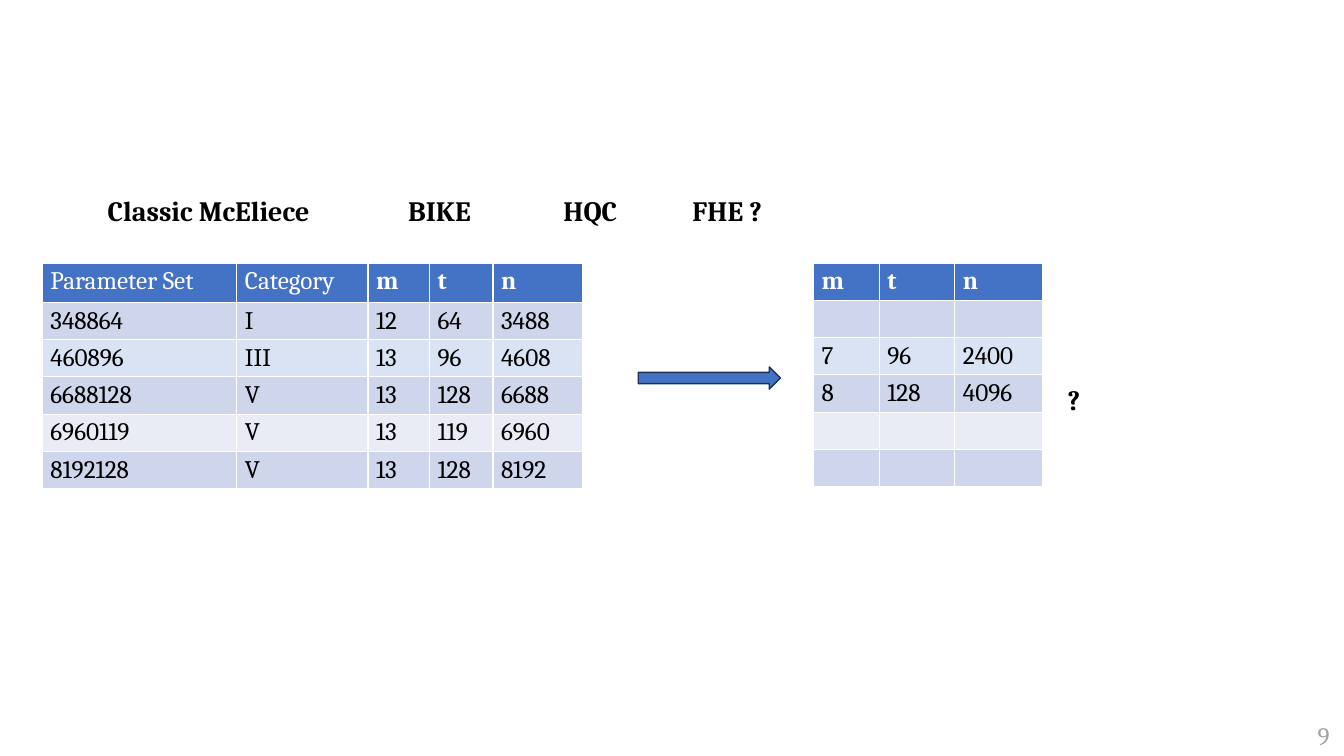
from pptx import Presentation
from pptx.dml.color import RGBColor
from pptx.enum.shapes import MSO_SHAPE
from pptx.oxml import parse_xml
from pptx.oxml.ns import nsdecls
from pptx.util import Inches, Pt

FONT = "Cambria"
BLUE = RGBColor(0x44, 0x72, 0xC4)
NAVY = RGBColor(0x1E, 0x32, 0x56)
LILAC = RGBColor(0xCF, 0xD5, 0xEA)
SKY = RGBColor(0xDA, 0xE3, 0xF3)
PALE = RGBColor(0xE9, 0xEB, 0xF5)
GRAY = RGBColor(0xA5, 0xA5, 0xA5)
BLACK = RGBColor(0, 0, 0)
WHITE = RGBColor(0xFF, 0xFF, 0xFF)
ROW_FILLS = [BLUE, LILAC, SKY, LILAC, PALE, LILAC]
TABLE_TOP = 2.61
ROW_H = 0.37
LABEL_TOP = 1.87


def set_font(p, size, color, bold=False):
    p.font.name = FONT
    p.font.size = Pt(size)
    p.font.bold = bold
    p.font.color.rgb = color


def add_label(text, x, y, w, h, size=20, color=BLACK, bold=True):
    tf = s.shapes.add_textbox(Inches(x), Inches(y), Inches(w), Inches(h)).text_frame
    tf.word_wrap = True
    p = tf.paragraphs[0]
    p.text = text
    set_font(p, size, color, bold)


prs = Presentation()
prs.slide_width = Inches(13.33)
prs.slide_height = Inches(7.5)
s = prs.slides.add_slide(prs.slide_layouts[6])

mceliece_rows = [
    ["Parameter Set", "Category", "m", "t", "n"],
    ["348864", "I", "12", "64", "3488"],
    ["460896", "III", "13", "96", "4608"],
    ["6688128", "V", "13", "128", "6688"],
    ["6960119", "V", "13", "119", "6960"],
    ["8192128", "V", "13", "128", "8192"],
]
reduced_rows = [
    ["m", "t", "n"],
    [""] * 3,
    ["7", "96", "2400"],
    ["8", "128", "4096"],
    [""] * 3,
    [""] * 3,
]
tables = [
    (0.42, [1.93, 1.3, 0.61, 0.63, 0.89], 0.39, mceliece_rows),
    (8.07, [0.65, 0.75, 0.87], ROW_H, reduced_rows),
]

for left, widths, header_h, rows in tables:
    height = header_h + ROW_H * (len(rows) - 1)
    table = s.shapes.add_table(len(rows), len(widths), Inches(left), Inches(TABLE_TOP),
                               Inches(sum(widths)), Inches(height)).table
    for column, width in zip(table.columns, widths):
        column.width = Inches(width)
    for i, (values, fill) in enumerate(zip(rows, ROW_FILLS)):
        table.rows[i].height = Inches(ROW_H if i else header_h)
        for j, value in enumerate(values):
            cell = table.cell(i, j)
            cell.margin_left = cell.margin_right = Inches(0.08)
            cell.margin_top = cell.margin_bottom = Inches(0.04)
            p = cell.text_frame.paragraphs[0]
            p.text = value
            set_font(p, 18, BLACK if i else WHITE, i == 0 and value in ("m", "t", "n"))
            tcPr = cell._tc.get_or_add_tcPr()
            for side in ("lnL", "lnR", "lnT", "lnB"):
                tcPr.append(parse_xml(
                    f'<a:{side} {nsdecls("a")} w="{Pt(0.84)}"><a:solidFill>'
                    f'<a:srgbClr val="{WHITE}"/></a:solidFill></a:{side}>'))
            cell.fill.solid()
            cell.fill.fore_color.rgb = fill

arrow = s.shapes.add_shape(MSO_SHAPE.RIGHT_ARROW, Inches(6.33), Inches(3.64),
                           Inches(1.41), Inches(0.22))
arrow.shadow.inherit = False
arrow.fill.solid()
arrow.fill.fore_color.rgb = BLUE
arrow.line.color.rgb = NAVY
arrow.line.width = Pt(1)

schemes = [("Classic McEliece", 0.97, 3.5), ("BIKE", 3.95, 1.34),
           ("HQC", 5.49, 0.97), ("FHE ?", 6.77, 1.67)]
for text, left, width in schemes:
    add_label(text, left, LABEL_TOP, width, 0.44)

add_label(" ?", 10.43, 3.75, 0.44, 0.44)
add_label("9", 12.97, 7.1, 0.36, 0.4, 18, GRAY, False)

prs.save("out.pptx")
